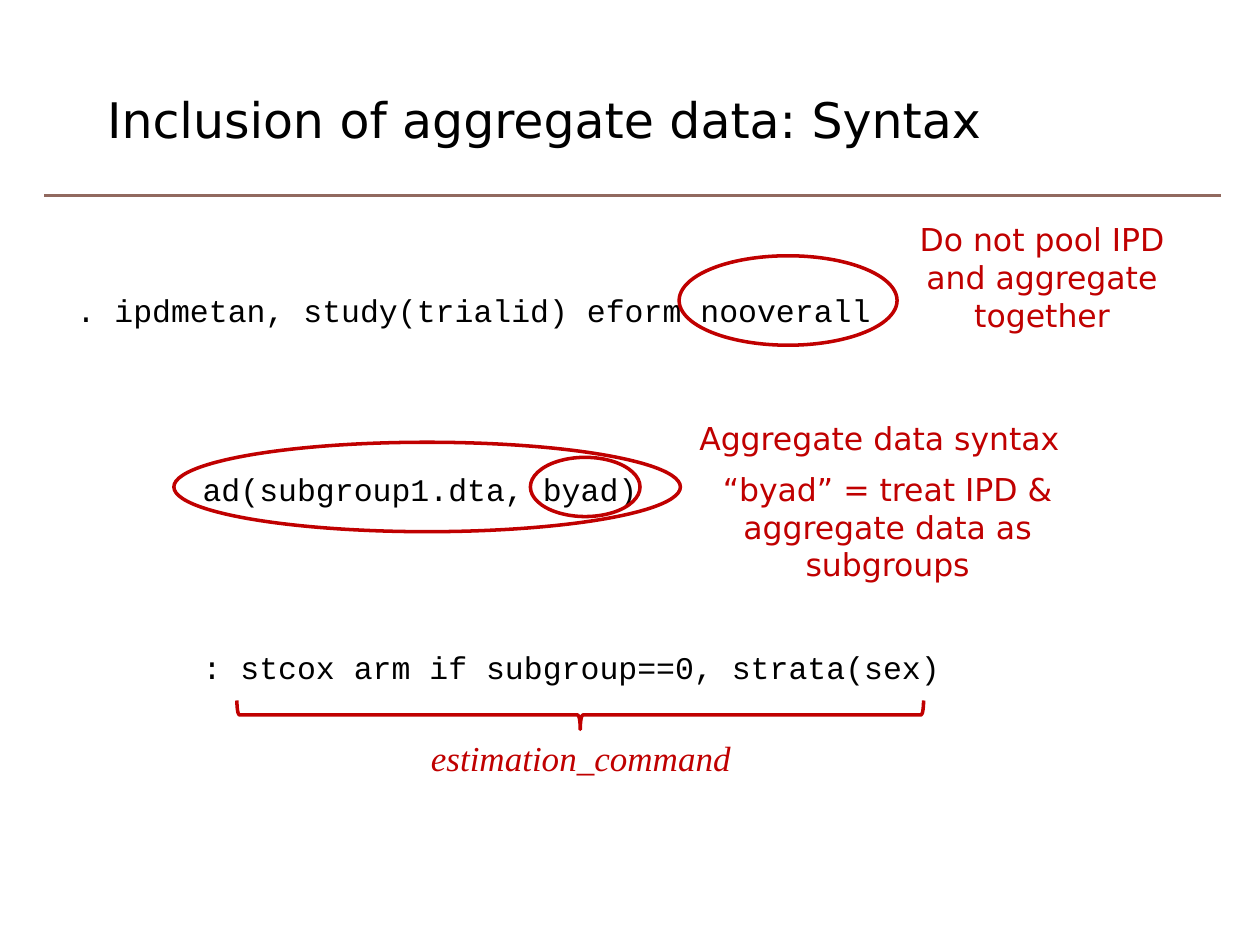
"""Build the slide on the syntax for including aggregate data."""
from dataclasses import dataclass

from lxml.etree import SubElement
from pptx import Presentation
from pptx.dml.color import RGBColor
from pptx.enum.shapes import MSO_CONNECTOR as Connector, MSO_SHAPE as Shape
from pptx.enum.text import MSO_ANCHOR as Anchor, PP_ALIGN as Align
from pptx.oxml.ns import qn
from pptx.slide import Slide
from pptx.util import Inches, Pt

COLORS = {"text": "000000", "mark": "C00000", "rule": "91695F"}
SANS, MONO, SERIF = "DejaVu Sans", "Courier New", "Times New Roman"


@dataclass
class Mark:
    left: float
    top: float
    width: float
    height: float
    kind: Shape = Shape.OVAL
    rotation: float = 0


@dataclass
class Note:
    text: str
    left: float
    top: float
    width: float
    height: float
    font: str = SANS
    size: int = 18
    italic: bool = False


@dataclass
class CodeLine:
    text: str
    indent: float = 0
    space_before: float = 0


MARKS = [
    Mark(5.39, 2.03, 1.73, 0.71),
    Mark(1.38, 3.51, 4.02, 0.71),
    Mark(4.21, 3.63, 0.87, 0.47),
    Mark(4.49, 2.95, 0.23, 5.45, Shape.RIGHT_BRACE, 90),
]
NOTES = [
    Note("Do not pool IPD and aggregate together", 7.13, 1.7, 2.28, 1.01),
    Note("Aggregate data syntax", 5.39, 3.28, 3.18, 0.4),
    Note("“byad” = treat IPD & aggregate data as subgroups", 5.63, 3.68, 2.83, 1.01),
    Note("estimation_command", 1.97, 5.8, 5.28, 0.44, SERIF, 20, True),
]
CODE = [
    CodeLine(". ipdmetan, study(trialid) eform nooverall"),
    CodeLine("ad(subgroup1.dta, byad)", 1, 80.5),
    CodeLine(": stcox arm if subgroup==0, strata(sex)", 1, 80.5),
]


def color(name: str) -> RGBColor:
    """Return the named colour."""
    return RGBColor.from_string(COLORS[name])


def set_font(para, name: str, size: float, shade: str, italic: bool = False) -> None:
    """Set the font of a whole paragraph."""
    font = para.font
    font.name, font.size, font.italic = name, Pt(size), italic
    font.color.rgb = color(shade)


def add_title(slide: Slide, text: str) -> None:
    """Place and format the title placeholder."""
    title = slide.shapes.title
    title.left, title.top = Inches(0.75), Inches(0.5)
    title.width, title.height = Inches(8.56), Inches(0.89)
    title.text_frame.text = text
    title.text_frame.vertical_anchor = Anchor.MIDDLE
    para = title.text_frame.paragraphs[0]
    para.alignment = Align.LEFT
    set_font(para, SANS, 28, "text")


def add_rule(slide: Slide) -> None:
    """Draw the line under the title."""
    rule = slide.shapes.add_connector(
        Connector.STRAIGHT, Inches(0.35), Inches(1.55), Inches(9.69), Inches(1.55))
    rule.line.color.rgb = color("rule")
    rule.line.width = Pt(1.75)
    SubElement(rule.element.spPr, qn("a:effectLst"))


def add_code(slide: Slide, lines: list[CodeLine]) -> None:
    """Write the command, one paragraph for each line."""
    box = slide.shapes.add_textbox(Inches(0.51), Inches(2.26), Inches(9.33), Inches(3.3))
    frame = box.text_frame
    frame.word_wrap = True
    for index, line in enumerate(lines):
        para = frame.add_paragraph() if index else frame.paragraphs[0]
        para.text = line.text
        para.space_before = Pt(line.space_before)
        para._p.get_or_add_pPr().set("marL", str(Inches(line.indent)))
        set_font(para, MONO, 18, "text")


def add_mark(slide: Slide, mark: Mark) -> None:
    """Draw an outlined ellipse or brace."""
    shape = slide.shapes.add_shape(
        mark.kind, Inches(mark.left), Inches(mark.top), Inches(mark.width), Inches(mark.height))
    shape.rotation = mark.rotation
    shape.shadow.inherit = False
    shape.fill.background()
    shape.line.color.rgb = color("mark")
    shape.line.width = Pt(2)


def add_note(slide: Slide, note: Note) -> None:
    """Write a centred explanation."""
    box = slide.shapes.add_textbox(
        Inches(note.left), Inches(note.top), Inches(note.width), Inches(note.height))
    box.text_frame.word_wrap = True
    para = box.text_frame.paragraphs[0]
    para.text = note.text
    para.alignment = Align.CENTER
    set_font(para, note.font, note.size, "mark", note.italic)


def main() -> None:
    """Build and save the deck."""
    deck = Presentation()
    deck.slide_width, deck.slide_height = Inches(10), Inches(7.5)
    page = deck.slides.add_slide(deck.slide_layouts[5])
    add_rule(page)
    add_title(page, "Inclusion of aggregate data: Syntax")
    add_code(page, CODE)
    for mark in MARKS:
        add_mark(page, mark)
    for note in NOTES:
        add_note(page, note)
    deck.save("out.pptx")


if __name__ == "__main__":
    main()
